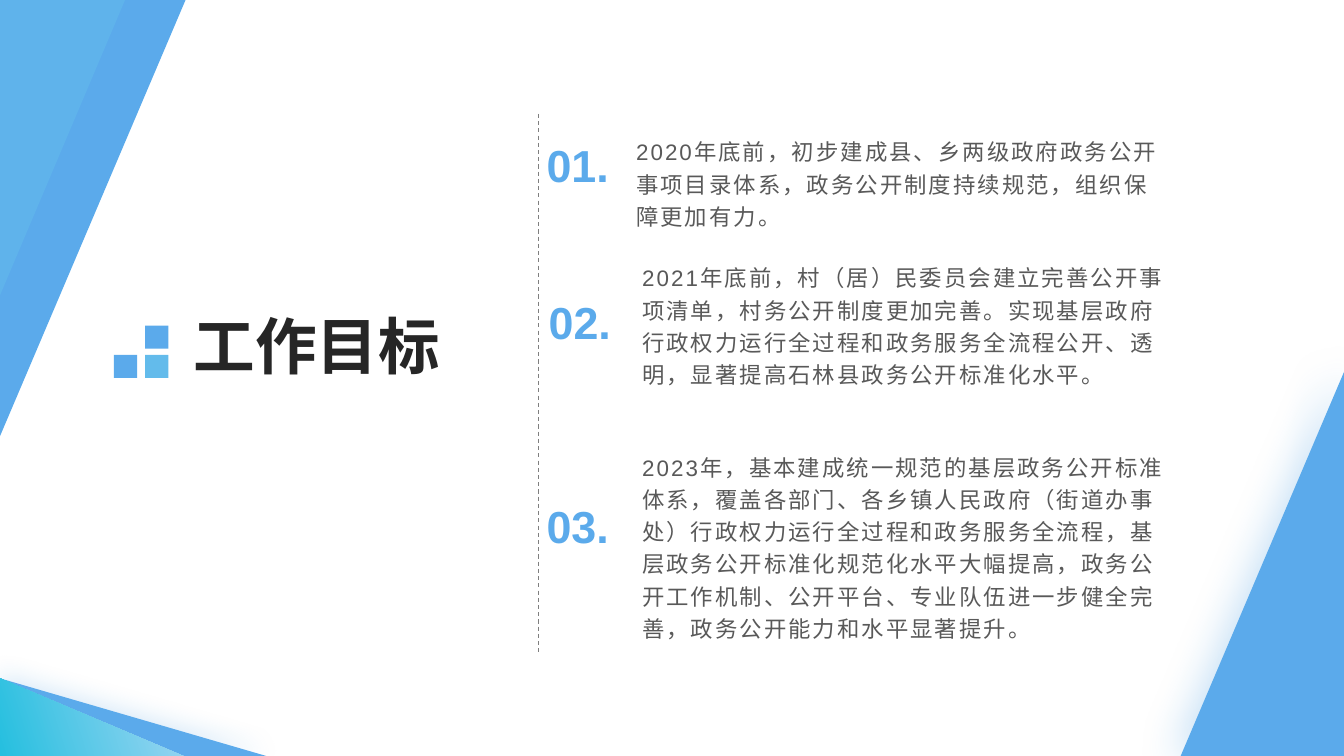
from dataclasses import dataclass

from lxml.etree import SubElement
from pptx import Presentation
from pptx.dml.color import RGBColor
from pptx.enum.dml import MSO_LINE
from pptx.enum.shapes import MSO_CONNECTOR, MSO_SHAPE
from pptx.enum.text import MSO_ANCHOR, MSO_AUTO_SIZE, PP_ALIGN
from pptx.oxml.ns import qn
from pptx.util import Inches, Pt


@dataclass(frozen=True)
class Theme:
    """Colours, font and type sizes of the slide."""

    blue: str = "5BAAEB"
    sky: str = "5FB3EB"
    pale: str = "63BBEB"
    gradient: tuple = ("A1D6F3", "25BFDF")
    shadow: str = "1B84DA"
    rule: str = "7F7F7F"
    title: str = "262626"
    body: str = "595959"
    font: str = "Arial"
    title_size: int = 44
    number_size: int = 32
    body_size: int = 16


THEME = Theme()
WIDTH, HEIGHT = 13.33, 7.5

GOALS = [
    ("01.", (5.32, 1.32), (6.21, 1.32, 5.52, 1.28),
     "2020年底前，初步建成县、乡两级政府政务公开事项目录体系，政务公开制度持续规范，组织保障更加有力。"),
    ("02.", (5.34, 2.87), (6.27, 2.57, 5.52, 1.28),
     "2021年底前，村（居）民委员会建立完善公开事项清单，村务公开制度更加完善。"
     "实现基层政府行政权力运行全过程和政务服务全流程公开、透明，显著提高石林县政务公开标准化水平。"),
    ("03.", (5.32, 4.9), (6.27, 4.45, 5.53, 2),
     "2023年，基本建成统一规范的基层政务公开标准体系，覆盖各部门、各乡镇人民政府（街道办事处）"
     "行政权力运行全过程和政务服务全流程，基层政务公开标准化规范化水平大幅提高，"
     "政务公开工作机制、公开平台、专业队伍进一步健全完善，政务公开能力和水平显著提升。"),
]


def add_block(slide, kind, box, color):
    """Add a flat shape without line or shadow."""
    shape = slide.shapes.add_shape(kind, *map(Inches, box))
    shape.shadow.inherit = False
    shape.fill.solid()
    shape.fill.fore_color.rgb = RGBColor.from_string(color)
    shape.line.fill.background()
    return shape


def add_triangle(slide, box, color, rotation=0):
    """Add a right triangle whose right angle starts at bottom right."""
    triangle = add_block(slide, MSO_SHAPE.ISOSCELES_TRIANGLE, box, color)
    triangle.adjustments[0] = 1
    triangle.rotation = rotation
    return triangle


def add_glow(shape, opacity, blur, direction):
    """Give a shape a soft coloured outer shadow."""
    effects = shape._element.spPr.find(qn("a:effectLst"))
    shadow = SubElement(effects, qn("a:outerShdw"), blurRad=str(Pt(blur)), dist=str(Pt(3)),
                        dir=str(direction * 60000), algn="ctr", rotWithShape="0")
    color = SubElement(shadow, qn("a:srgbClr"), val=THEME.shadow)
    SubElement(color, qn("a:alpha"), val=str(opacity * 1000))


def add_top_left_corner(slide, left, top):
    """Stack the three triangles that hang from the top left corner."""
    for offset, width, height, color in [(-0.01, 1.85, 4.35, THEME.blue),
                                         (-0.01, 1.58, 3.71, THEME.blue),
                                         (0, 1.24, 2.93, THEME.sky)]:
        add_triangle(slide, (left + offset, top, width, height), color, 180)


def add_bottom_right_corner(slide, right, bottom):
    """Stack the two triangles that fill the bottom right corner."""
    large, small = [
        add_triangle(slide, (right - width, bottom - height, width, height), THEME.blue)
        for width, height in [(1.62, 3.81), (1.08, 2.55)]]
    add_glow(large, 28, 32, 180)


def add_bottom_left_corner(slide, left, bottom):
    """Stack the two quarter-turned triangles in the bottom left corner."""
    height = 0.77
    middle = bottom - height / 2
    long, short = [
        add_triangle(slide, (left + (width - height) / 2, middle - width / 2, height, width),
                     THEME.blue, 90)
        for width in (2.64, 1.82)]
    add_glow(long, 17, 18, 270)
    short.fill.gradient()
    short.fill.gradient_angle = 288
    for stop, position, color in zip(short.fill.gradient_stops, (0, 1), THEME.gradient):
        stop.position = position
        stop.color.rgb = RGBColor.from_string(color)


def add_squares(slide, left, top):
    """Place the three small squares beside the title."""
    side, step_x, step_y = 0.23, 0.31, 0.29
    for column, row, color in [(1, 0, THEME.blue), (0, 1, THEME.blue), (1, 1, THEME.pale)]:
        add_block(slide, MSO_SHAPE.RECTANGLE,
                  (left + column * step_x, top + row * step_y, side, side), color)


def format_text(shape, text, size, color, bold=False):
    """Write one paragraph into a shape and set its font."""
    frame = shape.text_frame
    frame.word_wrap = True
    frame.auto_size = MSO_AUTO_SIZE.NONE
    frame.text = text
    paragraph = frame.paragraphs[0]
    paragraph.font.name = THEME.font
    paragraph.font.size = Pt(size)
    paragraph.font.bold = bold
    paragraph.font.color.rgb = RGBColor.from_string(color)
    return paragraph


def set_title(slide, text, box):
    """Move the title placeholder into its box and format it."""
    title = slide.shapes.title
    title.left, title.top, title.width, title.height = map(Inches, box)
    paragraph = format_text(title, text, THEME.title_size, THEME.title, True)
    paragraph.alignment = PP_ALIGN.LEFT
    frame = title.text_frame
    frame.vertical_anchor = MSO_ANCHOR.BOTTOM
    frame.margin_bottom = 0


def add_divider(slide, x, top, bottom):
    """Draw the dashed vertical line left of the goals."""
    line = slide.shapes.add_connector(MSO_CONNECTOR.STRAIGHT, *map(Inches, (x, top, x, bottom)))
    line.line.color.rgb = RGBColor.from_string(THEME.rule)
    line.line.width = Pt(0.75)
    line.line.dash_style = MSO_LINE.DASH
    SubElement(line._element.spPr, qn("a:effectLst"))


def add_goal(slide, number, number_corner, body_box, text):
    """Add a goal's number and its paragraph."""
    label = slide.shapes.add_textbox(*map(Inches, (*number_corner, 0.82, 0.69)))
    paragraph = format_text(label, number, THEME.number_size, THEME.blue, True)
    paragraph.alignment = PP_ALIGN.CENTER
    body = slide.shapes.add_textbox(*map(Inches, body_box))
    body.text_frame.margin_top = 0
    paragraph = format_text(body, text, THEME.body_size, THEME.body)
    paragraph.line_spacing = 1.2
    paragraph.runs[0].font._element.set("spc", "150")


def build_goals_slide(presentation):
    """Build the work goals slide."""
    slide = presentation.slides.add_slide(presentation.slide_layouts[5])
    add_top_left_corner(slide, 0, 0)
    add_bottom_right_corner(slide, WIDTH, HEIGHT)
    add_bottom_left_corner(slide, 0, HEIGHT)
    add_squares(slide, 1.13, 3.23)
    set_title(slide, "工作目标", (1.82, 2.95, 2.85, 0.84))
    add_divider(slide, 5.34, 1.13, 6.5)
    for goal in GOALS:
        add_goal(slide, *goal)


def main():
    """Create and save the presentation."""
    presentation = Presentation()
    presentation.slide_width = Inches(WIDTH)
    presentation.slide_height = Inches(HEIGHT)
    build_goals_slide(presentation)
    presentation.save("out.pptx")


if __name__ == "__main__":
    main()
